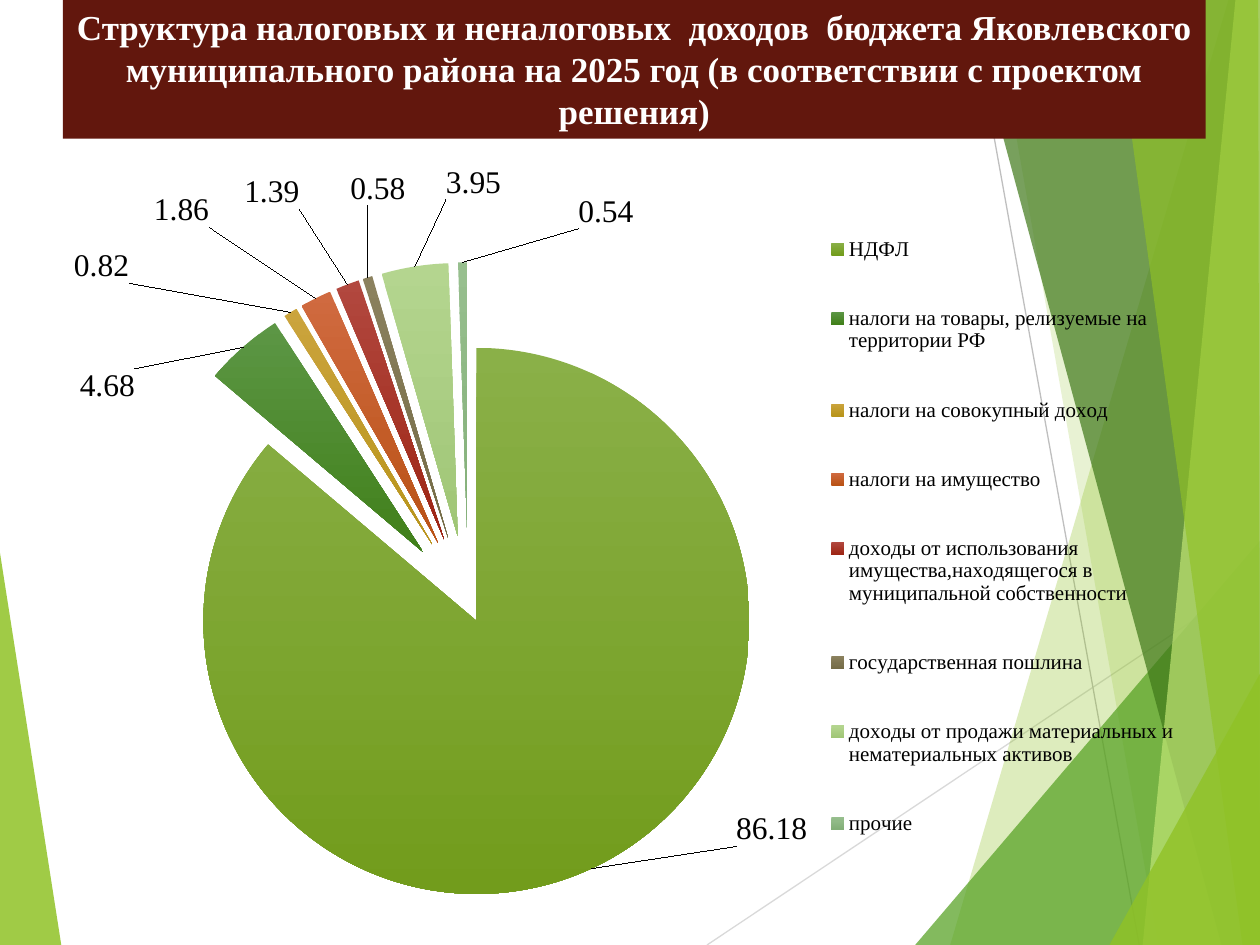
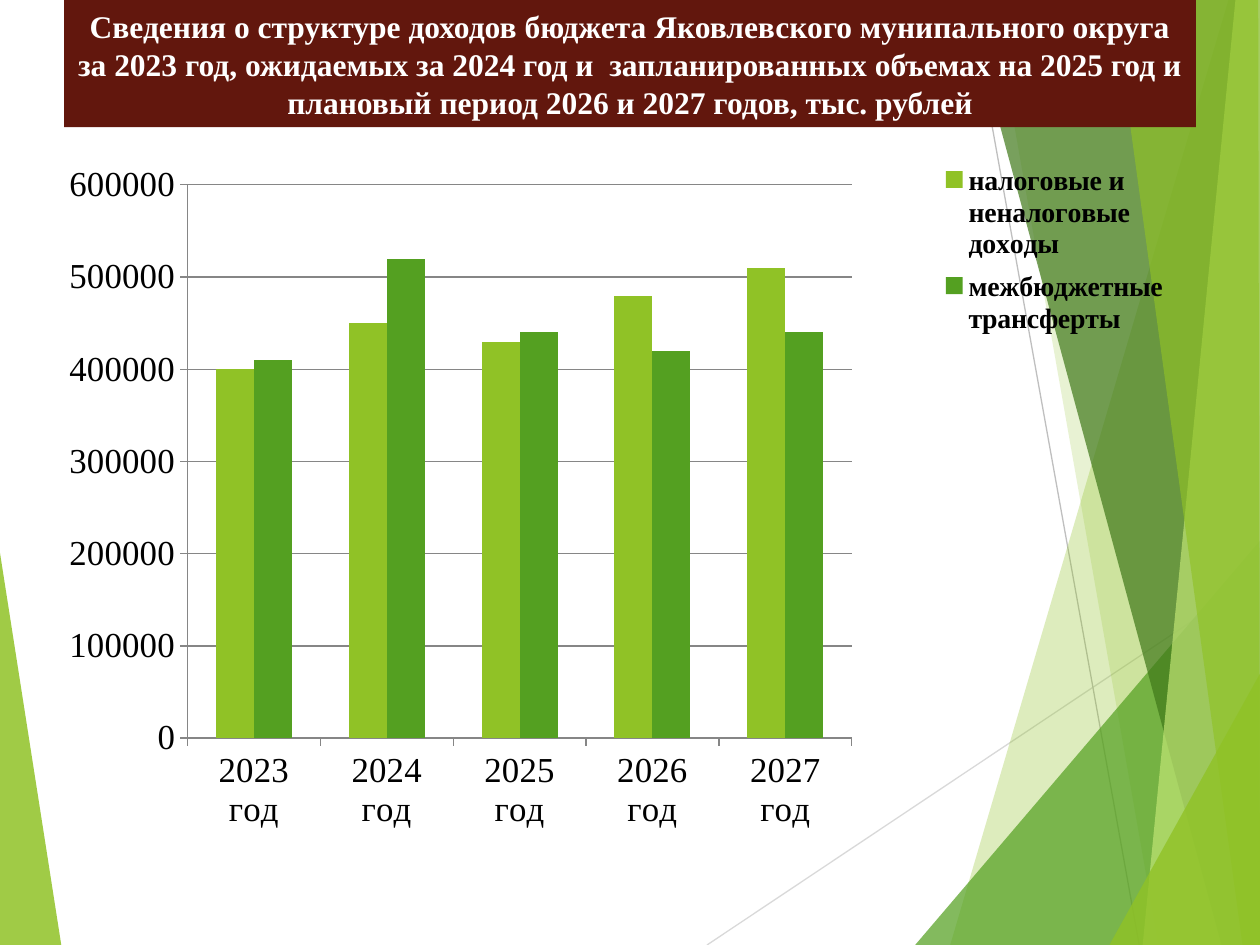
from typing import NamedTuple

from lxml import etree
from pptx import Presentation
from pptx.chart.data import CategoryChartData
from pptx.dml.color import RGBColor
from pptx.enum.chart import XL_CHART_TYPE, XL_LABEL_POSITION, XL_LEGEND_POSITION, XL_TICK_MARK
from pptx.enum.shapes import MSO_CONNECTOR, MSO_SHAPE
from pptx.enum.text import MSO_ANCHOR, PP_ALIGN
from pptx.oxml.ns import qn
from pptx.util import Pt

PIE = XL_CHART_TYPE.PIE
COLUMNS = XL_CHART_TYPE.COLUMN_CLUSTERED
OUTSIDE_END = XL_LABEL_POSITION.OUTSIDE_END
BOTTOM = XL_LEGEND_POSITION.BOTTOM
RIGHT = XL_LEGEND_POSITION.RIGHT
TICK_OUT = XL_TICK_MARK.OUTSIDE
STRAIGHT = MSO_CONNECTOR.STRAIGHT
RECT = MSO_SHAPE.RECTANGLE
MIDDLE = MSO_ANCHOR.MIDDLE
CENTER = PP_ALIGN.CENTER

W, H = 720, 540
SERIF = "Times New Roman"
BASE_FONT = "Cabin"
LIME, GREEN, DARK_GREEN, PALE_LIME = "90C226", "54A021", "3F7819", "C0E474"
MAROON, WHITE, BLACK, AXIS_GREY = "62170D", "FFFFFF", "000000", "868686"


class Facet(NamedTuple):
    color: str
    opacity: int
    corners: list[tuple[int, int]]


class Ray(NamedTuple):
    color: str
    start: tuple[int, int]
    end: tuple[int, int]


class Box(NamedTuple):
    left: float
    top: float
    width: float
    height: float


class Slice(NamedTuple):
    name: str
    value: float
    top_color: str
    bottom_color: str
    label_dx: int
    label_dy: int


LEFT_FACET = Facet(LIME, 85, [(0, 316), (35, H), (0, H)])
RAYS = [Ray("D9D9D9", (404, H), (W, 329)), Ray("BFBFBF", (554, 0), (651, H))]
RIGHT_FACETS = [
    Facet(LIME, 30, [(702, 0), (543, H), (W, H), (W, 0)]),
    Facet(LIME, 20, [(567, 0), (662, H), (W, H), (W, 0)]),
    Facet(GREEN, 72, [(523, H), (W, 309), (W, H)]),
    Facet(DARK_GREEN, 70, [(552, 0), (698, H), (W, H), (W, 0)]),
    Facet(PALE_LIME, 70, [(706, 0), (653, H), (W, H), (W, 0)]),
    Facet(LIME, 65, [(636, 0), (710, H), (W, H), (719, 0)]),
    Facet(LIME, 80, [(634, H), (W, 385), (W, H)]),
]

SLICES = [
    Slice("НДФЛ", 86.18, "8AB048", "729C1C", 81, -36),
    Slice("налоги на товары, релизуемые на территории РФ", 4.68, "5C9645", "41801A", -59, 35),
    Slice("налоги на совокупный доход", 0.82, "CBA43D", "B8941A", -90, -13),
    Slice("налоги на имущество", 1.86, "D06A40", "B95215", -59, -37),
    Slice("доходы от использования имущества,находящегося в муниципальной собственности",
          1.39, "B2483F", "9D2514", -26, -39),
    Slice("государственная пошлина", 0.58, "8B815E", "746B46", 23, -37),
    Slice("доходы от продажи материальных и нематериальных активов",
          3.95, "B4D58F", "A0C676", 50, -34),
    Slice("прочие", 0.54, "97BF8E", "83AF78", 82, -15),
]
YEARS = [f"{year} год" for year in range(2023, 2028)]
INCOME = [
    ("налоговые и неналоговые доходы", LIME, [400000, 450000, 430000, 480000, 510000]),
    ("межбюджетные трансферты", GREEN, [410000, 520000, 440000, 420000, 440000]),
]


def rgb(color: str) -> RGBColor:
    return RGBColor.from_string(color)


def set_font(font, color: str = BLACK, **formats) -> None:
    for name, value in formats.items():
        setattr(font, name, value)
    font.color.rgb = rgb(color)


def add_facet(s, facet: Facet) -> None:
    builder = s.shapes.build_freeform(*facet.corners[0], scale=Pt(1))
    builder.add_line_segments(facet.corners[1:], close=True)
    sp = builder.convert_to_shape()
    sp.shadow.inherit = False
    sp.line.fill.background()
    sp.fill.solid()
    sp.fill.fore_color.rgb = rgb(facet.color)
    color = next(sp._element.spPr.iter(qn("a:srgbClr")))
    etree.SubElement(color, qn("a:alpha"), val=str(facet.opacity * 1000))


def add_ray(s, ray: Ray) -> None:
    cxn = s.shapes.add_connector(STRAIGHT, *map(Pt, ray.start + ray.end))
    cxn.line.color.rgb = rgb(ray.color)
    cxn.line.width = Pt(0.75)
    etree.SubElement(cxn._element.spPr, qn("a:effectLst"))


def add_title(s, box: Box, text: str, size: int) -> None:
    sp = s.shapes.add_shape(RECT, *map(Pt, box))
    sp.shadow.inherit = False
    sp.fill.solid()
    sp.fill.fore_color.rgb = rgb(MAROON)
    sp.line.fill.background()
    tf = sp.text_frame
    tf.word_wrap = True
    tf.vertical_anchor = MIDDLE
    p = tf.paragraphs[0]
    p.alignment = CENTER
    r = p.add_run()
    r.text = text
    set_font(r.font, WHITE, name=SERIF, size=Pt(size), bold=True)


def new_slide(prs, title_box: Box, title: str, size: int):
    s = prs.slides.add_slide(prs.slide_layouts[6])
    add_facet(s, LEFT_FACET)
    for ray in RAYS:
        add_ray(s, ray)
    for facet in RIGHT_FACETS:
        add_facet(s, facet)
    add_title(s, title_box, title, size)
    return s


def set_layout(parent, index: int, **values) -> None:
    for old in parent.findall(qn("c:layout")):
        parent.remove(old)
    layout = etree.Element(qn("c:layout"))
    manual = etree.SubElement(layout, qn("c:manualLayout"))
    for name, value in values.items():
        etree.SubElement(manual, qn(f"c:{name}"), val=str(value))
    parent.insert(index, layout)


def add_chart(s, kind, box: Box, data, plot_box: Box, legend_box: Box, legend_side, **legend_font):
    chart = s.shapes.add_chart(kind, *map(Pt, box), data).chart
    chart.has_title = False
    set_font(chart.font, name=BASE_FONT, size=Pt(18))
    chart.has_legend = True
    legend = chart.legend
    legend.position = legend_side
    legend.include_in_layout = False
    set_font(legend.font, name=SERIF, **legend_font)
    plot_area = chart._chartSpace.find(".//" + qn("c:plotArea"))
    for parent, index, area, extra in (
        (plot_area, 0, plot_box, {"layoutTarget": "inner"}),
        (legend._element, 1, legend_box, {}),
    ):
        set_layout(parent, index, **extra, xMode="edge", yMode="edge",
                   x=area.left, y=area.top, w=area.width, h=area.height)
    return chart


def add_explosion(neighbour, percent: int, before: bool) -> None:
    explosion = etree.Element(qn("c:explosion"), val=str(percent))
    if before:
        neighbour.addprevious(explosion)
    else:
        neighbour.addnext(explosion)


def add_income_pie(s) -> None:
    box = Box(3.6, 86.4, 686, 453.6)
    data = CategoryChartData()
    data.categories = [part.name for part in SLICES]
    data.add_series("Series 1", [part.value for part in SLICES])
    chart = add_chart(s, PIE, box, data, Box(0.1, 0.14, 0.57, 0.86),
                      Box(0.68, 0.05, 0.3, 0.87), BOTTOM, size=Pt(12))
    plot = chart.plots[0]
    plot.vary_by_categories = True
    series = plot.series[0]
    labels = series.data_labels
    labels.show_value = True
    labels.position = OUTSIDE_END
    set_font(labels.font, name=SERIF, size=Pt(18))
    for i, part in enumerate(SLICES):
        point = series.points[i]
        fill = point.format.fill
        fill.gradient()
        fill.gradient_angle = 270
        for stop, color in zip(fill.gradient_stops, (part.top_color, part.bottom_color)):
            stop.color.rgb = rgb(color)
        label = point.data_label
        set_font(label.font, name=SERIF, size=Pt(18))
        label.position = OUTSIDE_END
    ser = series._element
    for label, part in zip(ser.iter(qn("c:dLbl")), SLICES):
        set_layout(label, 1, x=round(part.label_dx / box.width, 4),
                   y=round(part.label_dy / box.height, 4))
    add_explosion(ser.find(qn("c:tx")), 25, before=False)
    add_explosion(ser.find(qn("c:dPt")).find(qn("c:spPr")), 7, before=True)


def add_income_columns(s) -> None:
    data = CategoryChartData()
    data.categories = YEARS
    for name, _, values in INCOME:
        data.add_series(name, values)
    chart = add_chart(s, COLUMNS, Box(39.6, 74.9, 646.6, 439.2), data,
                      Box(0.1, 0.07, 0.59, 0.72), Box(0.76, 0.03, 0.22, 0.25),
                      RIGHT, size=Pt(16), bold=True)
    plot = chart.plots[0]
    plot.vary_by_categories = False
    plot.gap_width = 150
    plot.overlap = 0
    for series, (_, color, _) in zip(plot.series, INCOME):
        series.format.fill.solid()
        series.format.fill.fore_color.rgb = rgb(color)
    value_axis = chart.value_axis
    value_axis.minimum_scale = 0
    value_axis.maximum_scale = 600000
    value_axis.major_unit = 100000
    value_axis.has_major_gridlines = True
    for axis in (chart.category_axis, value_axis):
        axis.major_tick_mark = TICK_OUT
        set_font(axis.tick_labels.font, name=SERIF, size=Pt(20))
    for lined in (chart.category_axis, value_axis, value_axis.major_gridlines):
        lined.format.line.color.rgb = rgb(AXIS_GREY)
        lined.format.line.width = Pt(0.75)


def main() -> None:
    prs = Presentation()
    prs.slide_width, prs.slide_height = Pt(W), Pt(H)
    s = new_slide(prs, Box(36, -0.7, 653, 79.9),
                  "Структура налоговых и неналоговых  доходов  бюджета Яковлевского "
                  "муниципального района на 2025 год (в соответствии с проектом решения)", 20)
    add_income_pie(s)
    s = new_slide(prs, Box(36.7, 0, 646.6, 72.7),
                  "Сведения о структуре доходов бюджета Яковлевского мунипального округа "
                  "за 2023 год, ожидаемых за 2024 год и  запланированных объемах на 2025 год "
                  "и плановый период 2026 и 2027 годов, тыс. рублей", 18)
    add_income_columns(s)
    prs.save("out.pptx")


if __name__ == "__main__":
    main()
